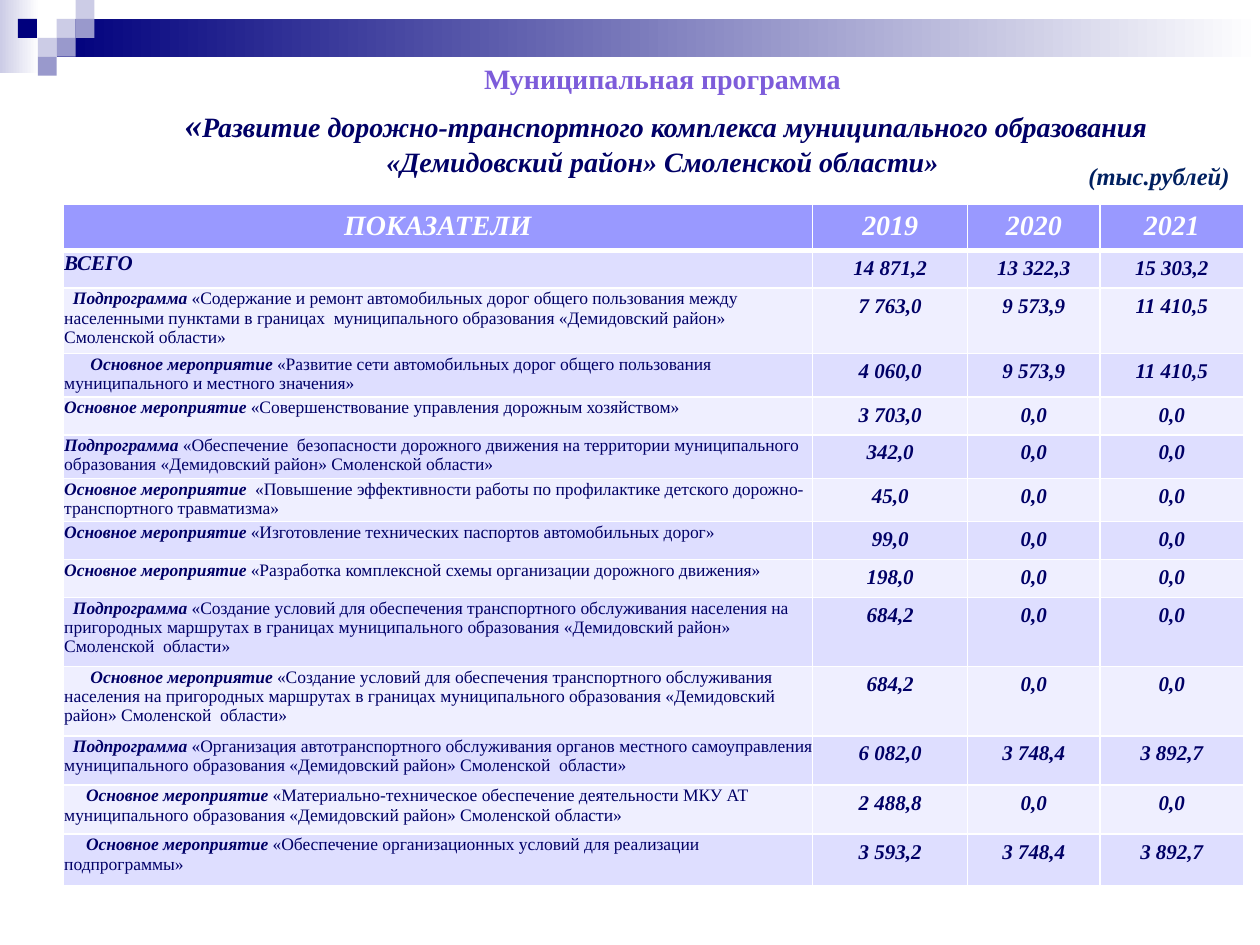
from lxml import etree
from pptx import Presentation
from pptx.dml.color import RGBColor
from pptx.enum.shapes import MSO_SHAPE
from pptx.enum.text import MSO_ANCHOR, PP_ALIGN
from pptx.oxml.ns import qn
from pptx.util import Inches, Pt

RECTANGLE = MSO_SHAPE.RECTANGLE
CENTER, LEFT, TOP = PP_ALIGN.CENTER, PP_ALIGN.LEFT, MSO_ANCHOR.TOP
FONT = "Times New Roman"
WHITE = RGBColor(0xFF, 0xFF, 0xFF)
NAVY = RGBColor(0x00, 0x00, 0x7D)
LILAC = RGBColor(0xCC, 0xCC, 0xE6)
MAUVE = RGBColor(0x99, 0x99, 0xCC)
VIOLET = RGBColor(0x7D, 0x5C, 0xDA)
INK = RGBColor(0x00, 0x00, 0x66)
UNIT_COLOR = RGBColor(0x00, 0x20, 0x60)
HEADER_FILL = RGBColor(0x99, 0x99, 0xFF)
BANDS = (RGBColor(0xEF, 0xEF, 0xFF), RGBColor(0xDE, 0xDE, 0xFF))
SQUARE = Inches(0.15)
SPACE = 2.5  # width of one space at 10 pt, in points

presentation = Presentation()
presentation.slide_width = Inches(10)
presentation.slide_height = Inches(7.5)
slide = presentation.slides.add_slide(presentation.slide_layouts[6])


def style(target, size, color, bold=True, italic=True):
    font = target.font
    font.name, font.size = FONT, Pt(size)
    font.bold, font.italic = bold, italic
    font.color.rgb = color


def set_borders(cell, top, bottom):
    properties = cell._tc.get_or_add_tcPr()
    for side, width in (("L", 1), ("R", 1), ("T", top), ("B", bottom)):
        line = etree.SubElement(properties, qn(f"a:ln{side}"), w=str(Pt(width)))
        fill = etree.SubElement(line, qn("a:solidFill"))
        etree.SubElement(fill, qn("a:srgbClr"), val=str(WHITE))


# Corner decoration on a grid of small squares: column, row, width, height, colours
decoration = [
    (0, 0, 2.07, 3.87, (LILAC, WHITE)),
    (3, 1, presentation.slide_width / SQUARE - 3, 2, (NAVY, WHITE)),
    (3, 1, 1, 1, (LILAC,)),
    (4, 0, 1, 1, (LILAC,)),
    (4, 1, 1, 1, (MAUVE,)),
    (2, 2, 1, 1, (LILAC,)),
    (0.95, 1, 1, 1, (NAVY,)),
    (3, 2, 1, 1, (MAUVE,)),
    (2, 3, 1, 1, (MAUVE,)),
]
for column, row, width, height, colors in decoration:
    shape = slide.shapes.add_shape(
        RECTANGLE, *(int(value * SQUARE) for value in (column, row, width, height)))
    shape.shadow.inherit = False
    shape.line.fill.background()
    if len(colors) == 1:
        shape.fill.solid()
        shape.fill.fore_color.rgb = colors[0]
    else:
        shape.fill.gradient()
        shape.fill.gradient_angle = 0
        for stop, color in zip(shape.fill.gradient_stops, colors):
            stop.color.rgb = color

# Title
title = slide.shapes.add_textbox(Inches(0.99), Inches(0.44), Inches(8.59), Inches(0.98))
title.text_frame.word_wrap = True
paragraph = title.text_frame.paragraphs[0]
paragraph.text = "Муниципальная программа "
paragraph.alignment = CENTER
style(paragraph, 16, VIOLET, italic=False)
paragraph = title.text_frame.add_paragraph()
paragraph.alignment = CENTER
paragraph.space_before = Pt(4)
for text, size in (
    ("«", 20),
    ("Развитие дорожно-транспортного комплекса муниципального образования "
     "«Демидовский район» Смоленской области» ", 16),
):
    run = paragraph.add_run()
    run.text = text
    style(run, size, INK)

# Table content: row height, indent in spaces, bold lead, plain text, values
SUBPROGRAM, MEASURE = "Подпрограмма ", "Основное мероприятие "
header = ("ПОКАЗАТЕЛИ", "2019", "2020", "2021")
rows = [
    (0.3, 0, "ВСЕГО", "", ("14 871,2", "13 322,3", "15 303,2")),
    (0.52, 2, SUBPROGRAM,
     "«Содержание и ремонт автомобильных дорог общего пользования между населенными пунктами "
     "в границах  муниципального образования «Демидовский район» Смоленской области»",
     ("7 763,0", "9 573,9", "11 410,5")),
    (0.34, 6, MEASURE,
     "«Развитие сети автомобильных дорог общего пользования муниципального и местного значения»",
     ("4 060,0", "9 573,9", "11 410,5")),
    (0.3, 0, MEASURE, "«Совершенствование управления дорожным хозяйством»",
     ("3 703,0", "0,0", "0,0")),
    (0.34, 0, SUBPROGRAM,
     "«Обеспечение  безопасности дорожного движения на территории муниципального образования "
     "«Демидовский район» Смоленской области»",
     ("342,0", "0,0", "0,0")),
    (0.34, 0, MEASURE + " ",
     "«Повышение эффективности работы по профилактике детского дорожно-транспортного травматизма»",
     ("45,0", "0,0", "0,0")),
    (0.3, 0, MEASURE, "«Изготовление технических паспортов автомобильных дорог»",
     ("99,0", "0,0", "0,0")),
    (0.3, 0, MEASURE, "«Разработка комплексной схемы организации дорожного движения»",
     ("198,0", "0,0", "0,0")),
    (0.55, 2, SUBPROGRAM,
     "«Создание условий для обеспечения транспортного обслуживания населения на пригородных "
     "маршрутах в границах муниципального образования «Демидовский район» Смоленской  области»",
     ("684,2", "0,0", "0,0")),
    (0.55, 6, MEASURE,
     "«Создание условий для обеспечения транспортного обслуживания населения на пригородных "
     "маршрутах в границах муниципального образования «Демидовский район» Смоленской  области»",
     ("684,2", "0,0", "0,0")),
    (0.39, 2, SUBPROGRAM,
     "«Организация автотранспортного обслуживания органов местного самоуправления "
     "муниципального образования «Демидовский район» Смоленской  области»",
     ("6 082,0", "3 748,4", "3 892,7")),
    (0.39, 5, MEASURE,
     "«Материально-техническое обеспечение деятельности МКУ АТ муниципального образования "
     "«Демидовский район» Смоленской области»",
     ("2 488,8", "0,0", "0,0")),
    (0.41, 5, MEASURE, "«Обеспечение организационных условий для реализации подпрограммы»",
     ("3 593,2", "3 748,4", "3 892,7")),
]
table = slide.shapes.add_table(
    len(rows) + 1, len(header), Inches(0.5), Inches(1.62), Inches(9.38), Inches(5.42)).table
for column, width in zip(table.columns, (5.95, 1.23, 1.05, 1.14)):
    column.width = Inches(width)

# Header row
table.rows[0].height = Inches(0.36)
for cell, text in zip(table.rows[0].cells, header):
    set_borders(cell, 1, 3)
    cell.fill.solid()
    cell.fill.fore_color.rgb = HEADER_FILL
    paragraph = cell.text_frame.paragraphs[0]
    paragraph.text = text
    paragraph.alignment = CENTER
    style(paragraph, 16, WHITE)

# Body rows
for index, (height, indent, lead, description, values) in enumerate(rows, start=1):
    table.rows[index].height = Inches(height)
    for cell, text in zip(table.rows[index].cells, (lead, *values)):
        set_borders(cell, 3 if index == 1 else 1, 1)
        cell.fill.solid()
        cell.fill.fore_color.rgb = BANDS[index % 2]
        cell.vertical_anchor = TOP
        paragraph = cell.text_frame.paragraphs[0]
        paragraph.text = text
        paragraph.alignment = CENTER
        style(paragraph, 12, INK)

    # Label cell: bold lead followed by plain text
    cell = table.cell(index, 0)
    cell.margin_left = cell.margin_top = Inches(0.01)
    cell.margin_right = cell.margin_bottom = 0
    paragraph = cell.text_frame.paragraphs[0]
    paragraph.alignment = LEFT
    if description:
        paragraph._p.get_or_add_pPr().set("indent", str(Pt(SPACE * indent)))
        style(paragraph.runs[0], 10, INK)
        run = paragraph.add_run()
        run.text = description
        style(run, 10, INK, bold=False, italic=False)

# Unit of measure
unit = slide.shapes.add_textbox(Inches(8.54), Inches(1.23), Inches(1.33), Inches(0.34))
unit.text_frame.word_wrap = False
paragraph = unit.text_frame.paragraphs[0]
paragraph.text = "(тыс.рублей)"
style(paragraph, 14, UNIT_COLOR)

presentation.save("out.pptx")
